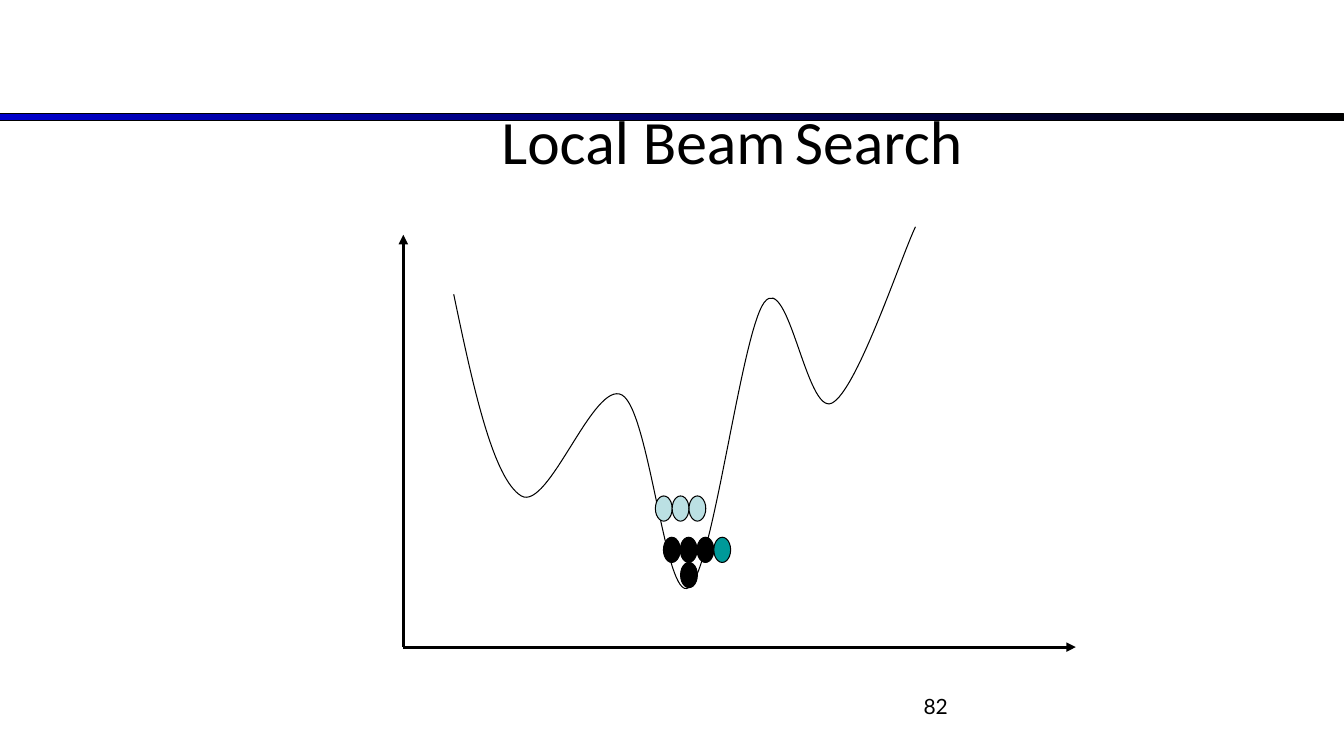
from lxml import etree
from pptx import Presentation
from pptx.dml.color import RGBColor
from pptx.enum.shapes import MSO_CONNECTOR, MSO_SHAPE
from pptx.enum.text import MSO_ANCHOR, PP_ALIGN
from pptx.oxml.ns import qn
from pptx.util import Inches, Pt

COLORS = {"black": "000000", "blue": "0000CC", "indigo": "333399",
          "pale": "BBE0E3", "teal": "009999"}

TITLE_RUNS = [("Local Beam", 44, "black", False),
              (" ", 28, "indigo", True),
              ("Search", 44, "black", False)]
PAGE_NUMBER = "82"

ORIGIN = (4, 6.42)
AXIS_TIPS = [(4, 2.33), (10.67, 6.42)]

# Cost curve: start, then two control points and an end point per segment
CURVE_START = (4.5, 2.92)
CURVE_SEGMENTS = [
    ((4.69, 3.83), (4.89, 4.75), (5.17, 4.92)),
    ((5.44, 5.08), (5.89, 3.76), (6.17, 3.92)),
    ((6.44, 4.07), (6.6, 5.99), (6.83, 5.83)),
    ((7.07, 5.68), (7.35, 3.31), (7.58, 3)),
    ((7.82, 2.69), (8, 4.12), (8.25, 4)),
    ((8.5, 3.88), (8.94, 2.54), (9.08, 2.25)),
]

# Rows of search states: left, top, colour of each state
STATE_ROWS = [(6.5, 4.92, ["pale"] * 3),
              (6.75, 5.58, ["black"]),
              (6.58, 5.33, ["black"] * 3 + ["teal"])]
STATE_WIDTH, STATE_HEIGHT = 1 / 6, 0.25


def rgb(name):
    return RGBColor.from_string(COLORS[name])


def box(left, top, width, height):
    return Inches(left), Inches(top), Inches(width), Inches(height)


def outline(shape, width=0.75):
    shape.line.color.rgb = rgb("black")
    shape.line.width = Pt(width)


def add_title(slide):
    title = slide.shapes.title
    title.left, title.top, title.width, title.height = box(3, 0.94, 8.52, 0.9)
    title.text_frame.vertical_anchor = MSO_ANCHOR.MIDDLE
    paragraph = title.text_frame.paragraphs[0]
    paragraph.alignment = PP_ALIGN.CENTER
    paragraph.font.name = "Calibri"
    for text, size, color, italic in TITLE_RUNS:
        run = paragraph.add_run()
        run.text = text
        run.font.name = "Calibri"
        run.font.size = Pt(size)
        run.font.italic = italic
        run.font.color.rgb = rgb(color)


def add_band(slide):
    """Gradient band, placed behind the title."""
    band = slide.shapes.add_shape(MSO_SHAPE.RECTANGLE, *box(0, 1.13, 13.33, 0.07))
    band.shadow.inherit = False
    band.fill.gradient()
    band.fill.gradient_angle = 0
    for stop, color in zip(band.fill.gradient_stops, ("blue", "black")):
        stop.color.rgb = rgb(color)
    outline(band)
    slide.shapes.title._element.addprevious(band._element)


def add_page_number(slide):
    number = slide.shapes.add_textbox(*box(7.17, 6.83, 2.33, 0.52))
    number.text_frame.word_wrap = True
    paragraph = number.text_frame.paragraphs[0]
    paragraph.text = PAGE_NUMBER
    paragraph.alignment = PP_ALIGN.RIGHT
    paragraph.font.name = "Lato"
    paragraph.font.size = Pt(15)
    paragraph.font.color.rgb = rgb("black")


def add_axis(slide, tip):
    axis = slide.shapes.add_connector(
        MSO_CONNECTOR.STRAIGHT, *(Inches(value) for value in ORIGIN + tip))
    outline(axis, 2.25)
    etree.SubElement(axis.line._get_or_add_ln(), qn("a:tailEnd"), type="triangle")
    etree.SubElement(axis._element.spPr, qn("a:effectLst"))


def add_curve(slide):
    """Freeform through all points, each three lines then merged into one Bézier."""
    builder = slide.shapes.build_freeform(*(Inches(value) for value in CURVE_START))
    builder.add_line_segments(
        [(Inches(x), Inches(y)) for segment in CURVE_SEGMENTS for x, y in segment],
        close=False)
    curve = builder.convert_to_shape()
    lines = list(curve._element.iter(qn("a:lnTo")))
    for first in range(0, len(lines), 3):
        bezier = etree.Element(qn("a:cubicBezTo"))
        lines[first].addprevious(bezier)
        for line in lines[first:first + 3]:
            bezier.append(line[0])
            line.getparent().remove(line)
    curve.shadow.inherit = False
    curve.fill.background()
    outline(curve)


def add_states(slide):
    for left, top, colors in STATE_ROWS:
        for column, color in enumerate(colors):
            state = slide.shapes.add_shape(
                MSO_SHAPE.OVAL,
                *box(left + column * STATE_WIDTH, top, STATE_WIDTH, STATE_HEIGHT))
            state.shadow.inherit = False
            state.fill.solid()
            state.fill.fore_color.rgb = rgb(color)
            outline(state)


def main():
    deck = Presentation()
    deck.slide_width, deck.slide_height = Inches(13.33), Inches(7.5)
    slide = deck.slides.add_slide(deck.slide_layouts.get_by_name("Title Only"))
    add_title(slide)
    add_band(slide)
    add_page_number(slide)
    for tip in AXIS_TIPS:
        add_axis(slide, tip)
    add_curve(slide)
    add_states(slide)
    deck.save("out.pptx")


if __name__ == "__main__":
    main()
